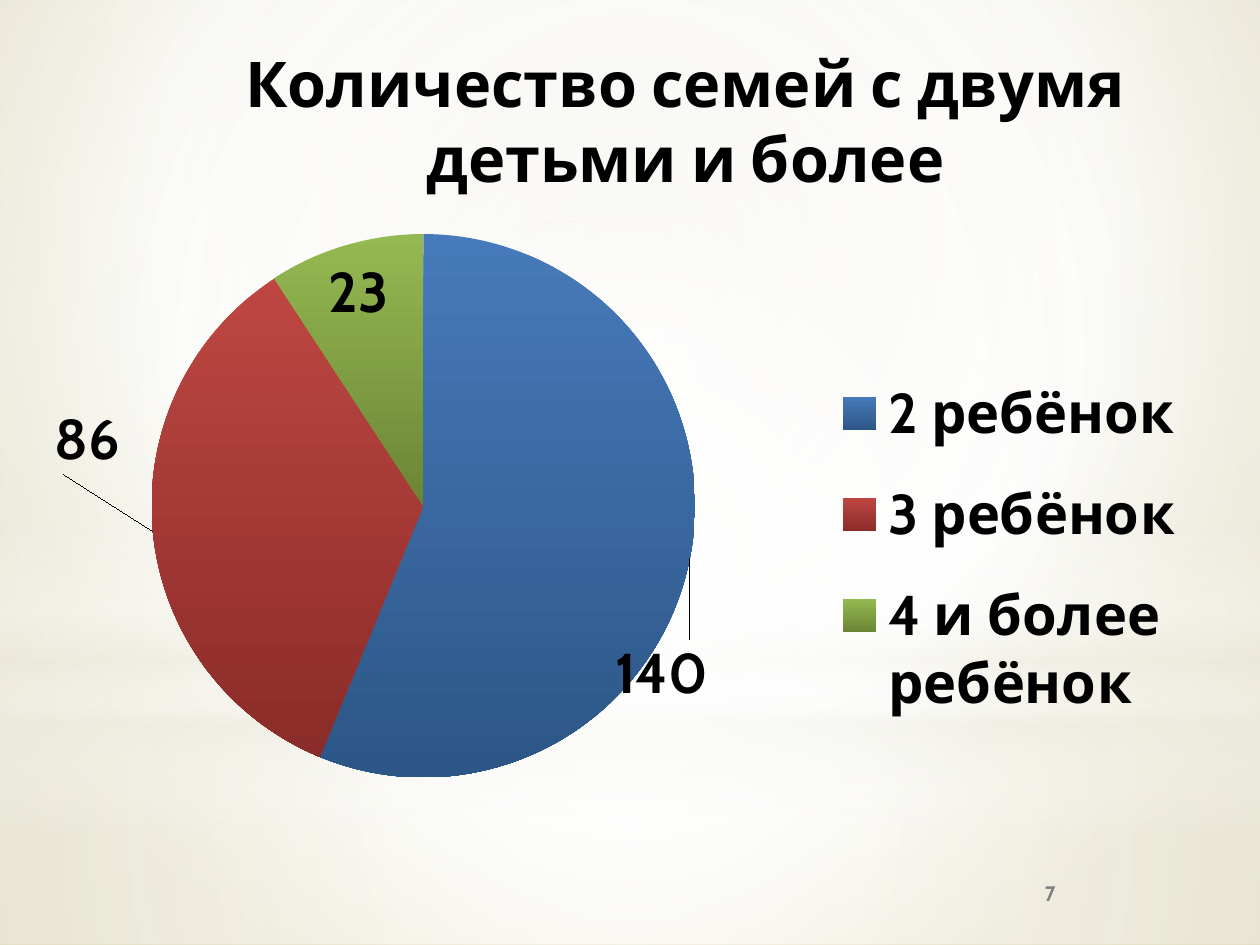
from dataclasses import dataclass

from lxml import etree
from pptx import Presentation
from pptx import util as u
from pptx.chart import data
from pptx.dml import color
from pptx.enum import chart as charts, shapes, text
from pptx.oxml import ns


@dataclass(frozen=True)
class Theme:
    font: str = "Cabin"
    ink: str = "000000"
    muted: str = "808080"
    white: str = "FFFFFF"
    cream: str = "EEECE1"
    backdrop: tuple = ((0, "E7E4D4"), (60, "FFFFFF"), (100, "D5CC9F"))
    slices: tuple = (("477ABA", "2C5686"), ("BE4642", "8A2C29"), ("94B951", "6B8536"))
    title_size: int = 36
    chart_size: int = 32
    number_size: int = 12


def gradient(stops, focus=None, angle=90):
    fill = etree.Element(ns.qn("a:gradFill"), rotWithShape="1")
    stop_list = etree.SubElement(fill, ns.qn("a:gsLst"))
    for position, rgb, *opacity in stops:
        stop = etree.SubElement(stop_list, ns.qn("a:gs"), pos=str(position * 1000))
        tone = etree.SubElement(stop, ns.qn("a:srgbClr"), val=rgb)
        if opacity:
            etree.SubElement(tone, ns.qn("a:alpha"), val=str(opacity[0] * 1000))
    if focus:
        shade = etree.SubElement(fill, ns.qn("a:path"), path="circle")
        edges = {side: str(value * 1000) for side, value in zip("ltrb", focus)}
        etree.SubElement(shade, ns.qn("a:fillToRect"), **edges)
    else:
        etree.SubElement(fill, ns.qn("a:lin"), ang=str(angle * 60000), scaled="0")
    return fill


class SlideBuilder:
    """Draw styled elements on the current slide."""

    def __init__(self, slide, theme):
        self.slide = slide
        self.theme = theme

    def style(self, font, size, rgb):
        font.name = self.theme.font
        font.size = u.Pt(size)
        font.bold = True
        font.color.rgb = color.RGBColor.from_string(rgb)

    def background(self, stops, focus):
        self.slide.background.fill.solid()
        solid = self.slide.element.xpath(".//p:bgPr/a:solidFill")[0]
        solid.getparent().replace(solid, gradient(stops, focus))

    def glow(self, kind, top, height, stops, focus=None):
        shape = self.slide.shapes.add_shape(
            kind, u.Pt(0), u.Pt(top), u.Pt(720), u.Pt(height))
        shape.shadow.inherit = False
        shape.line.fill.background()
        shape.fill.solid()
        solid = shape.element.spPr.find(ns.qn("a:solidFill"))
        shape.element.spPr.replace(solid, gradient(stops, focus))

    def label(self, content, box, size, rgb, anchor):
        shape = self.slide.shapes.add_textbox(*map(u.Pt, box))
        frame = shape.text_frame
        frame.word_wrap = True
        frame.vertical_anchor = anchor
        frame.text = content
        paragraph = frame.paragraphs[0]
        paragraph.alignment = text.PP_ALIGN.CENTER
        self.style(paragraph.runs[0].font, size, rgb)

    def pie(self, counts, box, plot_area, legend_area, label_shifts):
        theme = self.theme
        chart_data = data.CategoryChartData()
        chart_data.categories = counts.keys()
        chart_data.add_series("Series 1", counts.values())
        frame = self.slide.shapes.add_chart(
            charts.XL_CHART_TYPE.PIE, *map(u.Pt, box), chart_data)
        chart = frame.chart
        chart.has_title = False
        self.style(chart.font, theme.chart_size, theme.ink)
        chart.has_legend = True
        chart.legend.position = charts.XL_LEGEND_POSITION.RIGHT
        chart.legend.include_in_layout = False
        self.style(chart.legend.font, theme.chart_size, theme.ink)
        edges = (("xMode", "edge"), ("yMode", "edge"))
        inner = (("layoutTarget", "inner"), *edges)
        for name, index, modes, area in (("plotArea", 0, inner, plot_area),
                                         ("legend", 1, edges, legend_area)):
            node = chart.element.xpath(f".//c:{name}")[0]
            for old in node.findall(ns.qn("c:layout")):
                node.remove(old)
            node.insert(index, self.layout((*modes, *zip("xywh", area))))

        chart.plots[0].vary_by_categories = True
        series = chart.plots[0].series[0]
        labels = series.data_labels
        labels.show_value = True
        labels.position = charts.XL_LABEL_POSITION.BEST_FIT
        self.style(labels.font, theme.chart_size, theme.ink)
        for index, tones in enumerate(theme.slices):
            fill = series.points[index].format.fill
            fill.gradient()
            fill.gradient_angle = 270
            for stop, rgb, position in zip(fill.gradient_stops, tones, (0, 1)):
                stop.color.rgb = color.RGBColor.from_string(rgb)
                stop.position = position
        for index, shift in label_shifts.items():
            point_label = series.points[index].data_label
            self.style(point_label.font, theme.chart_size, theme.ink)
            point_label.position = charts.XL_LABEL_POSITION.BEST_FIT
            node = chart.element.xpath(f".//c:dLbl[c:idx/@val='{index}']")[0]
            node.insert(1, self.layout(zip("xy", shift)))

    @staticmethod
    def layout(settings):
        layout = etree.Element(ns.qn("c:layout"))
        manual = etree.SubElement(layout, ns.qn("c:manualLayout"))
        for name, value in settings:
            etree.SubElement(manual, ns.qn(f"c:{name}"), val=str(value))
        return layout


def main():
    theme = Theme()
    presentation = Presentation()
    presentation.slide_width, presentation.slide_height = u.Pt(720), u.Pt(540)
    slide = presentation.slides.add_slide(presentation.slide_layouts[6])
    builder = SlideBuilder(slide, theme)
    white, cream = theme.white, theme.cream
    rectangle, oval = shapes.MSO_SHAPE.RECTANGLE, shapes.MSO_SHAPE.OVAL
    center = (50, 50, 50, 50)

    builder.background(theme.backdrop, (20, 10, 20, 60))
    builder.glow(rectangle, 402, 138,
                 ((0, white, 91), (37, white, 76), (100, cream, 79)), center)
    builder.glow(rectangle, 0, 402,
                 ((0, white, 89), (48, white, 62), (100, cream, 79)), center)
    builder.glow(rectangle, 296.6, 180,
                 ((0, white, 0), (29, white, 30), (45, cream, 40),
                  (55, white, 26), (65, cream, 60), (100, white, 0)))
    builder.glow(oval, 126, 402, ((0, white), (56, white, 0)), center)

    builder.label("Количество семей с двумя детьми и более", (99.4, 21.6, 584.6, 56.9),
                  theme.title_size, theme.ink, text.MSO_ANCHOR.TOP)
    builder.pie({"2 ребёнок": 140, "3 ребёнок": 86, "4 и более ребёнок": 23},
                (31, 122.4, 669.6, 378.7), (0.08, 0.03, 0.47, 0.82),
                (0.65, 0.2, 0.33, 0.61), {0: (-0.07, 0.12), 1: (-0.07, -0.19)})
    builder.label("7", (516.2, 491.8, 167.8, 37.4),
                  theme.number_size, theme.muted, text.MSO_ANCHOR.MIDDLE)
    presentation.save("out.pptx")


if __name__ == "__main__":
    main()
